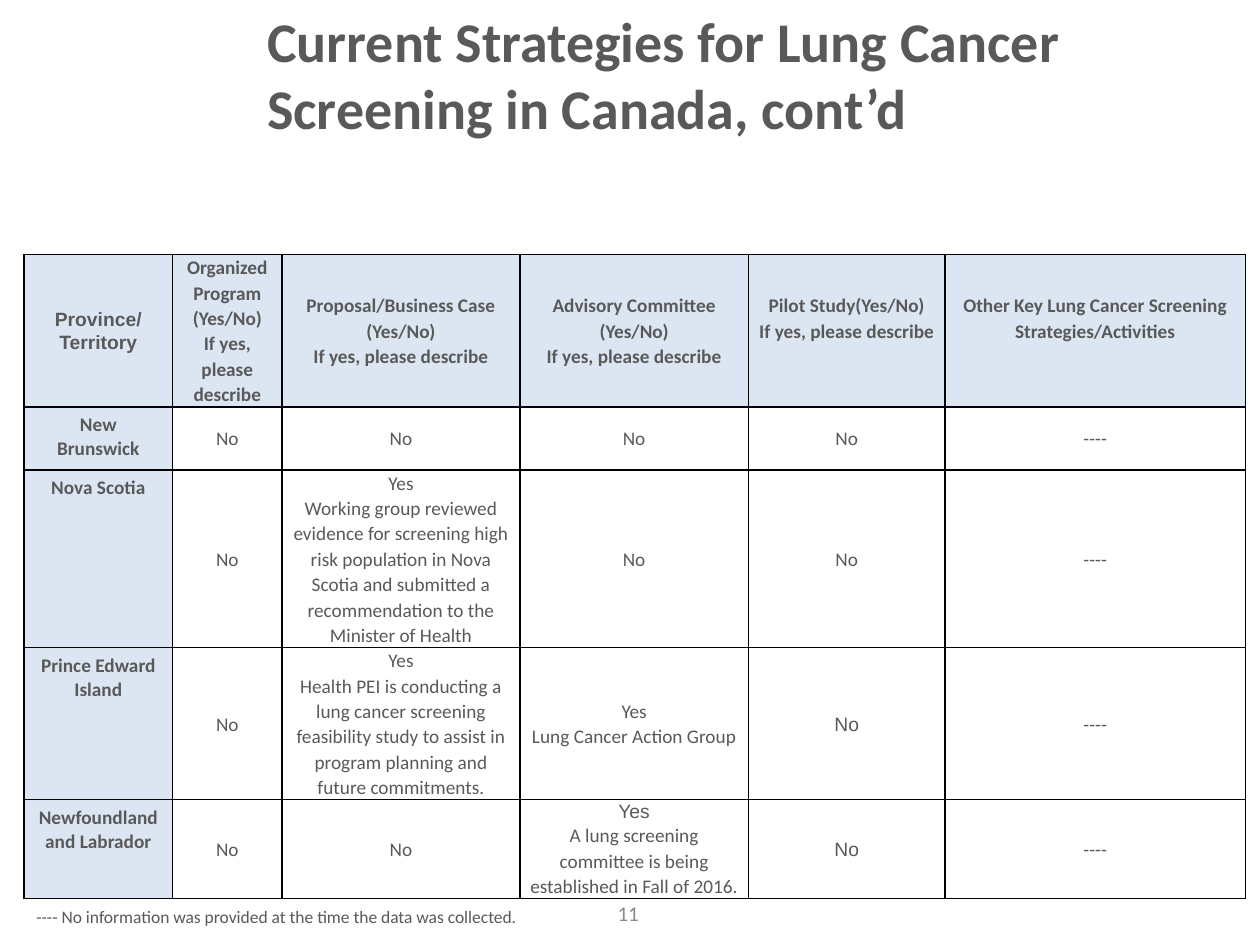
from lxml import etree
from pptx import Presentation
from pptx.dml.color import RGBColor
from pptx.enum import text
from pptx.oxml import ns
from pptx.util import Pt

TITLE = "Current Strategies for Lung Cancer Screening in Canada, cont’d"
PAGE = "11"
NOTE = "---- No information was provided at the time the data was collected."
DESCRIBE = "If yes, please describe"
NONE = "----"
ROWS = [
    [["Province/", "Territory"],
     ["Organized Program", "(Yes/No)", DESCRIBE],
     ["Proposal/Business Case", "(Yes/No)", DESCRIBE],
     ["Advisory Committee (Yes/No)", DESCRIBE],
     ["Pilot Study(Yes/No)", DESCRIBE],
     ["Other Key Lung Cancer Screening Strategies/Activities"]],
    [["New Brunswick"], ["No"], ["No"], ["No"], ["No"], [NONE]],
    [["Nova Scotia"], ["No"],
     ["Yes", "Working group reviewed evidence for screening high risk population "
      "in Nova Scotia and submitted a recommendation to the Minister of Health"],
     ["No"], ["No"], [NONE]],
    [["Prince Edward Island"], ["No"],
     ["Yes", "Health PEI is conducting a lung cancer screening feasibility study "
      "to assist in program planning and future commitments."],
     ["Yes", "Lung Cancer Action Group"], ["No"], [NONE]],
    [["Newfoundland and Labrador"], ["No"], ["No"],
     ["Yes", "A lung screening committee is being established in Fall of 2016."],
     ["No"], [NONE]],
]
COL_WIDTHS = [85, 62.5, 136, 130.5, 112.5, 171.5]
ROW_HEIGHTS = [87, 36, 101.5, 87, 56.5]
ARIAL_LINES = {(0, 0, 0), (0, 0, 1), (3, 4, 0), (4, 3, 0), (4, 4, 0)}
RAISED_HEADERS = {(0, 4), (0, 5)}
GREY, PALE, WHITE, BLACK = "595959", "DCE6F2", "FFFFFF", "000000"
CENTER = text.PP_ALIGN.CENTER
MIDDLE, TOP = text.MSO_ANCHOR.MIDDLE, text.MSO_ANCHOR.TOP


def color(value):
    return RGBColor.from_string(value)


def add_run(p, words, size, value=GREY, bold=False, font="Calibri"):
    r = p.add_run()
    r.text = words
    r.font.name, r.font.size, r.font.bold = font, Pt(size), bold
    r.font.color.rgb = color(value)


def add_text(s, box, words, size, value=GREY, bold=False, align=None, anchor=MIDDLE):
    tf = s.shapes.add_textbox(*map(Pt, box)).text_frame
    tf.word_wrap = True
    tf.vertical_anchor = anchor
    p = tf.paragraphs[0]
    p.alignment = align
    add_run(p, words, size, value, bold)


def add_borders(cell):
    tc_pr = cell._tc.get_or_add_tcPr()
    for i, side in enumerate(("lnL", "lnR", "lnT", "lnB")):
        ln = etree.Element(ns.qn("a:" + side), w=str(Pt(1)))
        fill = etree.SubElement(ln, ns.qn("a:solidFill"))
        etree.SubElement(fill, ns.qn("a:srgbClr"), val=BLACK)
        tc_pr.insert(i, ln)


def fill_cell(cell, row, col, lines):
    is_province = col == 0 and row > 0
    side, edge = (7.2, 3.6) if is_province else (5, 0)
    cell.margin_left = cell.margin_right = Pt(side)
    cell.margin_top = Pt(edge)
    cell.margin_bottom = Pt(14.5 if (row, col) in RAISED_HEADERS else edge)
    cell.vertical_anchor = TOP if is_province else MIDDLE
    header = row == 0 or col == 0
    cell.fill.solid()
    cell.fill.fore_color.rgb = color(PALE if header else WHITE)
    add_borders(cell)
    tf = cell.text_frame
    for i, line in enumerate(lines):
        p = tf.add_paragraph() if i else tf.paragraphs[0]
        p.alignment = CENTER
        if not is_province:
            p.line_spacing = 1.07
        font = "Arial" if (row, col, i) in ARIAL_LINES else "Calibri"
        add_run(p, line, 11, bold=header, font=font)


def add_strategy_table(s):
    table = s.shapes.add_table(
        len(ROWS), len(COL_WIDTHS), Pt(13.7), Pt(145.5),
        Pt(sum(COL_WIDTHS)), Pt(sum(ROW_HEIGHTS))).table
    table.horz_banding = False
    for column, width in zip(table.columns, COL_WIDTHS):
        column.width = Pt(width)
    for i, (height, cells) in enumerate(zip(ROW_HEIGHTS, ROWS)):
        table.rows[i].height = Pt(height)
        for j, lines in enumerate(cells):
            fill_cell(table.cell(i, j), i, j, lines)


def main():
    prs = Presentation()
    prs.slide_width, prs.slide_height = Pt(720), Pt(540)
    s = prs.slides.add_slide(prs.slide_layouts[6])
    add_text(s, (145.5, 15, 574.5, 54), TITLE, 32, bold=True)
    add_text(s, (275, 507.5, 168, 29), PAGE, 12, "898989", align=CENTER)
    add_strategy_table(s)
    add_text(s, (13.7, 514, 360, 19.5), NOTE, 10, anchor=TOP)
    prs.save("out.pptx")


if __name__ == "__main__":
    main()
